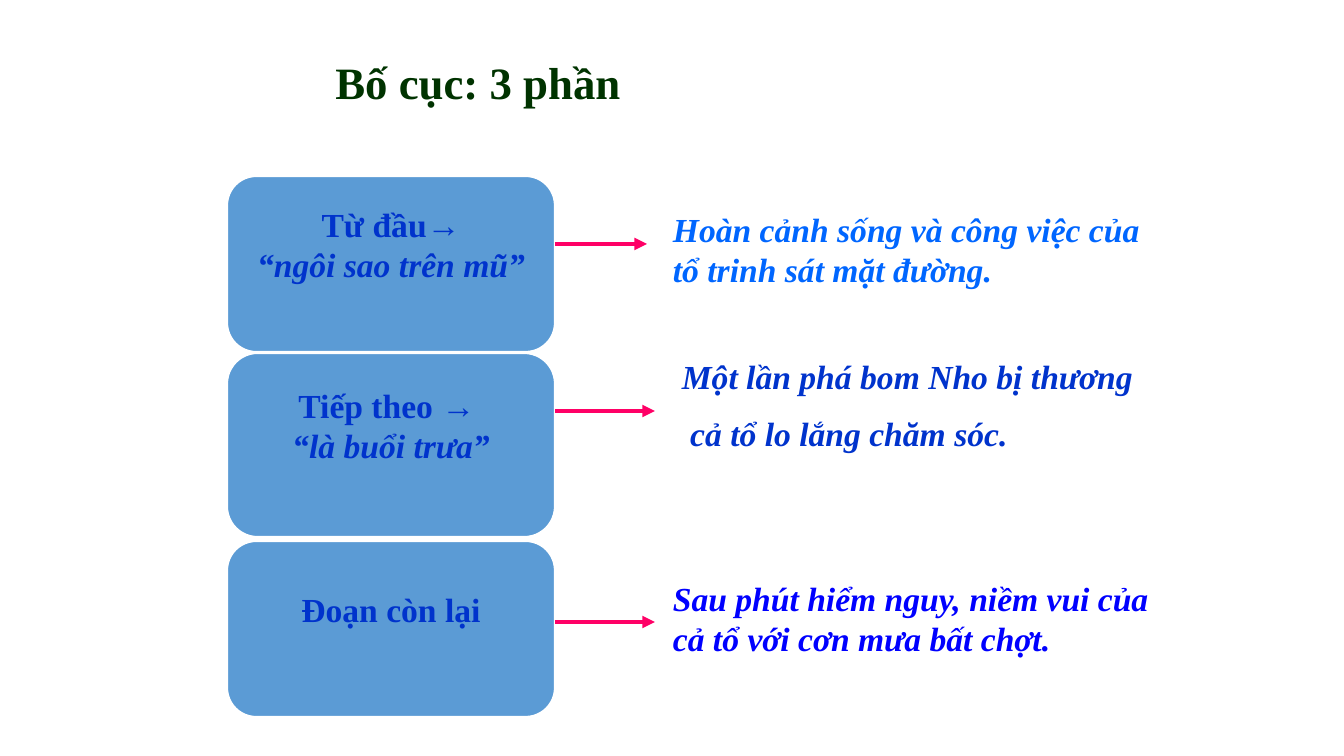
"""Build the slide on the three-part layout of a story."""
from lxml import etree
from pptx import Presentation
from pptx import util as u
from pptx.dml.color import RGBColor
from pptx.enum import shapes, text
from pptx.oxml.ns import qn

EMU_PER_PX = 914400 / 100.8
FONT = "Times New Roman"
BOX_LEFT, BOX_WIDTH = 227, 328
BOX_FILL, BOX_TEXT, ARROW = "5B9BD5", "0033CC", "FF0066"
INSET, EMPTY_LINE = 5, 40

TITLE = ("Bố cục: 3 phần", (285, 50, 386, 64))
PARTS = [
    {
        "box": (176, 176),
        "source": [[("Từ đầu", False), ("→", True)], [("“ngôi sao trên mũ”", True)]],
        "arrow": (244, 647),
        "summary": ["Hoàn cảnh sống và công việc của tổ trinh sát mặt đường."],
        "frame": (663, 204, 504, 92),
        "color": "0066FF",
        "wrap": True,
    },
    {
        "box": (353, 184),
        "source": [[("Tiếp theo ", False), ("→ ", True)], [("“là buổi trưa”", True)]],
        "arrow": (411, 655),
        "summary": ["Một lần phá bom Nho bị thương", " cả tổ lo lắng chăm sóc."],
        "frame": (672, 351, 476, 112),
        "color": "0033CC",
        "wrap": False,
    },
    {
        "box": (541, 176),
        "source": [[("Đoạn còn lại", False)]],
        "arrow": (622, 655),
        "summary": ["Sau phút hiểm nguy, niềm vui của cả tổ với cơn mưa bất chợt."],
        "frame": (663, 573, 496, 92),
        "color": "0000FF",
        "wrap": True,
    },
]


def px(*lengths):
    return [u.Emu(round(length * EMU_PER_PX)) for length in lengths]


def rgb(color):
    return RGBColor.from_string(color)


def write(frame, paragraphs, color, size=24, align=text.PP_ALIGN.LEFT,
          anchor=text.MSO_ANCHOR.TOP, wrap=True, before=0, bottom=INSET):
    frame.word_wrap = wrap
    frame.auto_size = text.MSO_AUTO_SIZE.NONE
    frame.vertical_anchor = anchor
    frame.margin_bottom = px(bottom)[0]
    for index, runs in enumerate(paragraphs):
        paragraph = frame.paragraphs[0] if index == 0 else frame.add_paragraph()
        paragraph.alignment = align
        paragraph.space_before = u.Pt(before if index else 0)
        for words, italic in runs:
            run = paragraph.add_run()
            run.text = words
            run.font.name = FONT
            run.font.size = u.Pt(size)
            run.font.bold = True
            run.font.italic = italic
            run.font.color.rgb = rgb(color)


def add_box(slide, part):
    top, height = part["box"]
    box = slide.shapes.add_shape(shapes.MSO_SHAPE.ROUNDED_RECTANGLE,
                                 *px(BOX_LEFT, top, BOX_WIDTH, height))
    box.shadow.inherit = False
    box.fill.solid()
    box.fill.fore_color.rgb = rgb(BOX_FILL)
    box.line.color.rgb = rgb("FFFFFF")
    box.line.width = u.Pt(1.5)
    write(box.text_frame, part["source"], BOX_TEXT, align=text.PP_ALIGN.CENTER,
          anchor=text.MSO_ANCHOR.MIDDLE, wrap=False, bottom=INSET + EMPTY_LINE)


def add_arrow(slide, part):
    y, end = part["arrow"]
    arrow = slide.shapes.add_connector(shapes.MSO_CONNECTOR.STRAIGHT,
                                       *px(BOX_LEFT + BOX_WIDTH, y, end, y))
    arrow.line.color.rgb = rgb(ARROW)
    arrow.line.width = u.Pt(3)
    etree.SubElement(arrow.line._get_or_add_ln(), qn("a:tailEnd"), type="triangle")
    etree.SubElement(arrow._element.spPr, qn("a:effectLst"))


def add_summary(slide, part):
    box = slide.shapes.add_textbox(*px(*part["frame"]))
    write(box.text_frame, [[(line, True)] for line in part["summary"]],
          part["color"], wrap=part["wrap"], before=12)


def main():
    presentation = Presentation()
    presentation.slide_width, presentation.slide_height = px(1344, 756)
    slide = presentation.slides.add_slide(presentation.slide_layouts[5])

    words, frame = TITLE
    title = slide.shapes.title
    title.left, title.top, title.width, title.height = px(*frame)
    write(title.text_frame, [[(words, False)]], "003300", size=32,
          align=text.PP_ALIGN.CENTER)

    for part in PARTS:
        add_box(slide, part)
        add_arrow(slide, part)
        add_summary(slide, part)
    presentation.save("out.pptx")


if __name__ == "__main__":
    main()
